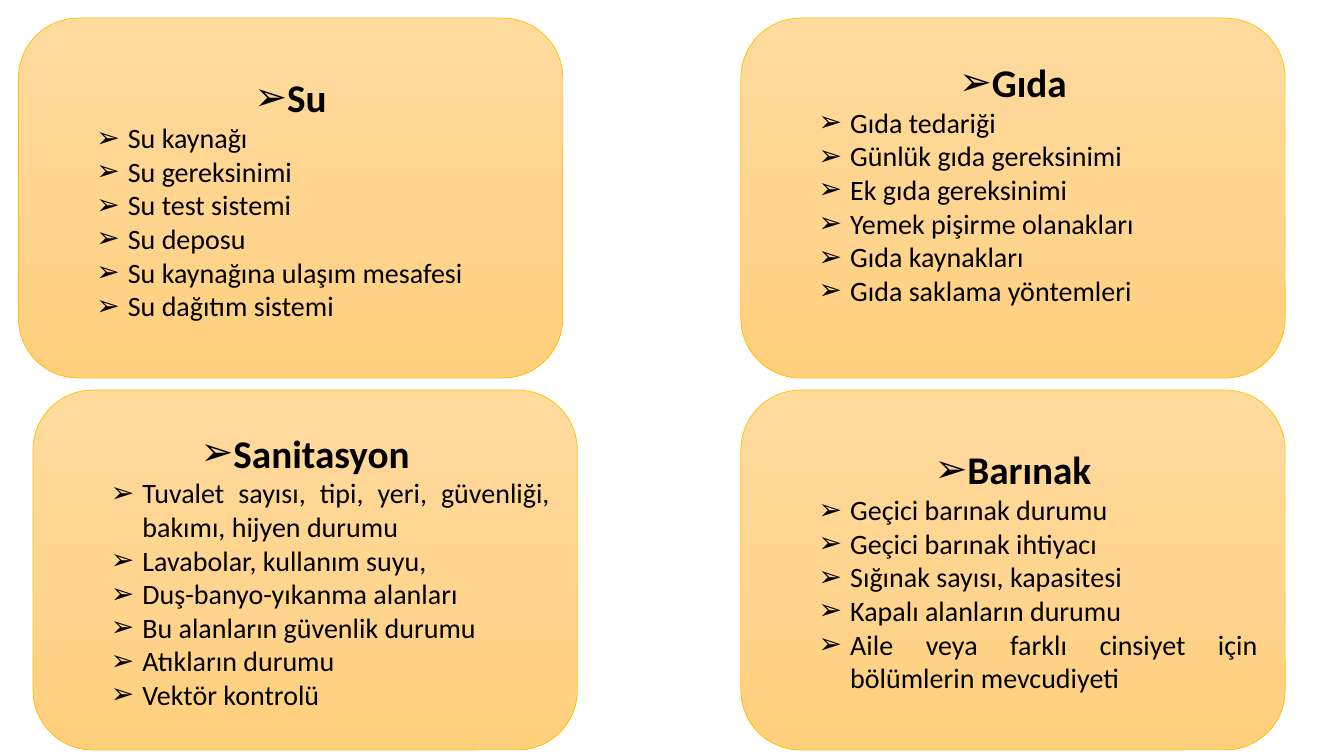
from copy import deepcopy

from lxml import etree
from pptx import Presentation
from pptx.dml import color as col
from pptx.enum import shapes, text
from pptx.oxml import ns
from pptx.util import Pt

HUES = {"top": "FFDB9E", "mid": "FFD590", "low": "FFD07C",
        "edge": "FFC000", "ink": "000000"}
WIDE, HIGH = 388.8, 257.04      # card size
TOPS = (12.96, 278.64)          # card rows
STEP = 22.5                     # hanging indent of the bullets

# Left edge, row, extra space below the text, heading, items
CARDS = [
    (13.2, 0, 0, "Su",
     ["Su kaynağı", "Su gereksinimi", "Su test sistemi", "Su deposu",
      "Su kaynağına ulaşım mesafesi", "Su dağıtım sistemi"]),
    (23.6, 1, 0, "Sanitasyon",
     ["Tuvalet sayısı, tipi, yeri, güvenliği, bakımı, hijyen durumu",
      "Lavabolar, kullanım suyu,", "Duş-banyo-yıkanma alanları",
      "Bu alanların güvenlik durumu", "Atıkların durumu",
      "Vektör kontrolü"]),
    (529.2, 0, 22, "Gıda",
     ["Gıda tedariği", "Günlük gıda gereksinimi", "Ek gıda gereksinimi",
      "Yemek pişirme olanakları", "Gıda kaynakları",
      "Gıda saklama yöntemleri"]),
    (529.2, 1, 0, "Barınak",
     ["Geçici barınak durumu", "Geçici barınak ihtiyacı",
      "Sığınak sayısı, kapasitesi", "Kapalı alanların durumu",
      "Aile veya farklı cinsiyet için bölümlerin mevcudiyeti"]),
]


class Deck:
    face = "Calibri"

    def __init__(self, slide):
        self.slide = slide

    def hue(self, name):
        return col.RGBColor.from_string(HUES[name])

    def blend(self, box):
        """Fill a shape with the three-stop vertical gradient."""
        fill = box.fill
        fill.gradient()
        fill.gradient_angle = 270
        stops = box._element.spPr.find(ns.qn("a:gradFill")).find(ns.qn("a:gsLst"))
        stops.insert(1, deepcopy(stops[0]))
        for stop, name, spot in zip(fill.gradient_stops,
                                    ("top", "mid", "low"), (0, 0.5, 1)):
            stop.color.rgb = self.hue(name)
            stop.position = spot

    def line(self, para, words, size, level=0):
        """Write one bulleted paragraph: a heading or a list item."""
        para.text = words
        para.level = level
        para.alignment = text.PP_ALIGN.JUSTIFY if level else text.PP_ALIGN.CENTER
        font = para.font
        font.name, font.size, font.bold = self.face, Pt(size), level == 0
        font.color.rgb = self.hue("ink")
        props = para._p.get_or_add_pPr()
        props.set("marL", str(Pt(STEP + 36 * level)))
        props.set("indent", str(-Pt(STEP)))
        props.insert(0, etree.Element(ns.qn("a:buFont"), typeface=self.face))
        props.insert(1, etree.Element(ns.qn("a:buChar"), char="➢"))

    def card(self, left, row, pad, head, items):
        box = self.slide.shapes.add_shape(
            shapes.MSO_SHAPE.ROUNDED_RECTANGLE,
            Pt(left), Pt(TOPS[row]), Pt(WIDE), Pt(HIGH))
        box.shadow.inherit = False
        self.blend(box)
        box.line.color.rgb = self.hue("edge")
        box.line.width = Pt(0.5)
        frame = box.text_frame
        frame.word_wrap = True
        frame.vertical_anchor = text.MSO_ANCHOR.MIDDLE
        frame.margin_bottom = Pt(3.6 + pad)
        self.line(frame.paragraphs[0], head, 28)
        for item in items:
            self.line(frame.add_paragraph(), item, 20, 1)


def main():
    show = Presentation()
    show.slide_width, show.slide_height = Pt(960), Pt(540)
    deck = Deck(show.slides.add_slide(show.slide_layouts[6]))
    # Four topic cards
    for card in CARDS:
        deck.card(*card)
    show.save("out.pptx")


if __name__ == "__main__":
    main()
